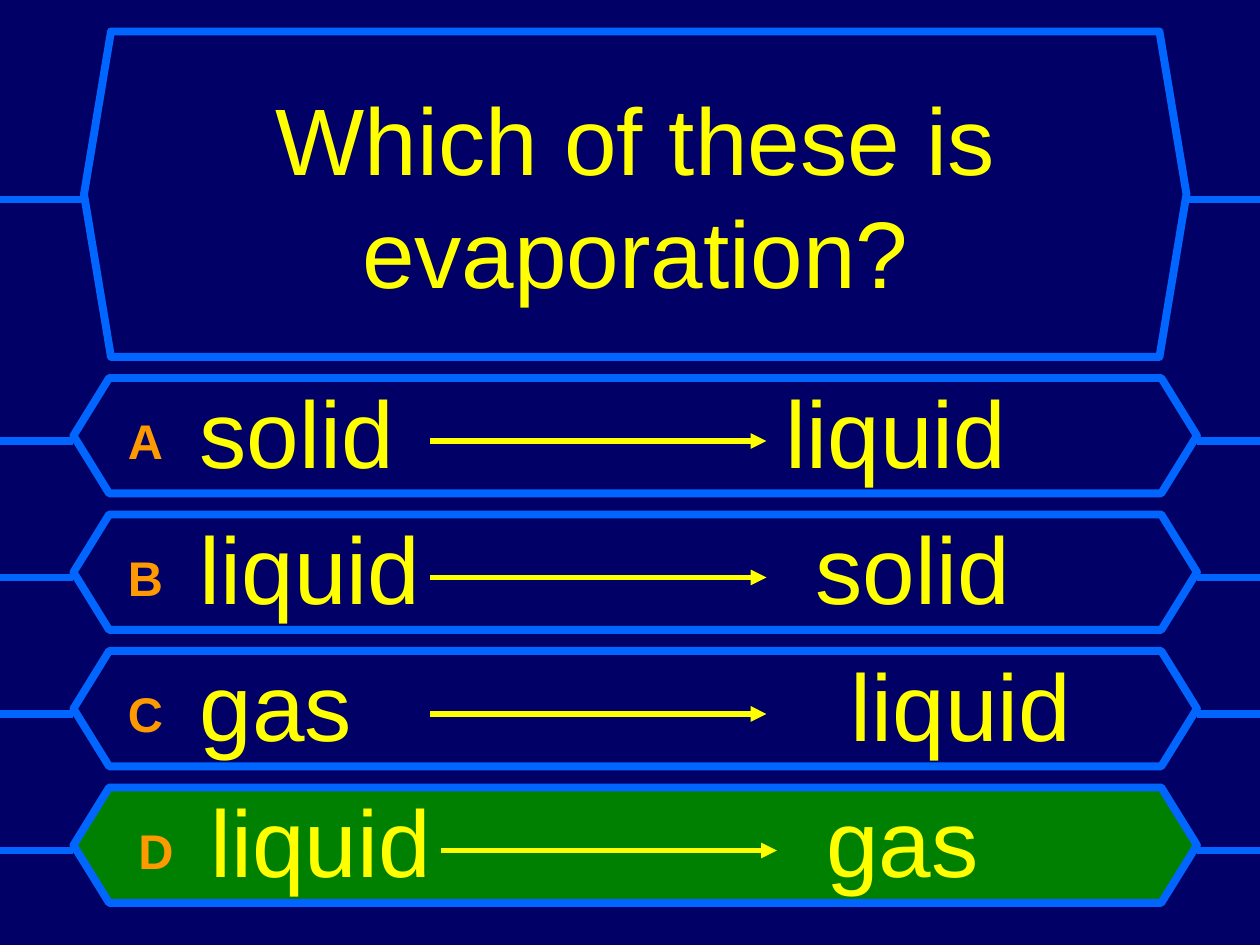
from lxml.etree import SubElement
from pptx import Presentation
from pptx.dml.color import RGBColor
from pptx.enum.shapes import MSO_CONNECTOR as Connector, MSO_SHAPE as Shape
from pptx.enum.text import MSO_ANCHOR as Anchor, MSO_AUTO_SIZE as AutoSize, PP_ALIGN as Align
from pptx.oxml.ns import qn
from pptx.util import Pt

NAVY, BLUE, GREEN = "000066", "0066FF", "008000"
YELLOW, ORANGE = "FFFF00", "FF9900"
SLIDE_WIDTH, SLIDE_HEIGHT = 720, 540
ROW_TOP, ROW_PITCH, ROW_HEIGHT = 216, 78, 66
ROW_LEFT, ROW_WIDTH = 42, 642
WORD_TAB = 41

ANSWERS = [
    ("A", "solid", "liquid", 66, 523.4, 376, NAVY),
    ("B", "liquid", "solid", 66, 523.4, 393, NAVY),
    ("C", "gas", "liquid", 66, 562.3, 413, None),
    ("D", "liquid", "gas", 72, 499.7, 393, GREEN),
]


def color(value):
    return RGBColor.from_string(value)


def add_text(paragraph, text, size=54, fill=YELLOW, bold=False, baseline=None):
    run = paragraph.add_run()
    run.text = text
    run.font.name = "Arial"
    run.font.size = Pt(size)
    run.font.bold = bold
    run.font.color.rgb = color(fill)
    if baseline:
        run.font._element.set("baseline", str(baseline * 1000))


def add_hexagon(shapes, left, top, width, height, point, fill):
    shape = shapes.add_shape(Shape.HEXAGON, Pt(left), Pt(top), Pt(width), Pt(height))
    shape.shadow.inherit = False
    shape.adjustments[0] = point
    shape.line.color.rgb = color(BLUE)
    shape.line.width = Pt(4.5)
    if fill:
        shape.fill.solid()
        shape.fill.fore_color.rgb = color(fill)
    else:
        shape.fill.background()


def add_line(shapes, start, end, y, stroke=BLUE, width=4.5, arrow=False):
    line = shapes.add_connector(Connector.STRAIGHT, Pt(start), Pt(y), Pt(end), Pt(y))
    line.line.color.rgb = color(stroke)
    line.line.width = Pt(width)
    if arrow:
        SubElement(line.line._get_or_add_ln(), qn("a:tailEnd"), type="triangle")
    SubElement(line._element.spPr, qn("a:effectLst"))


def add_side_lines(shapes, left, right, y):
    add_line(shapes, left, 0, y)
    add_line(shapes, SLIDE_WIDTH, right, y)


def format_answer(paragraph, tabs):
    properties = paragraph._p.get_or_add_pPr()
    spacing = SubElement(properties, qn("a:spcBef"))
    SubElement(spacing, qn("a:spcPct"), val="20000")
    tab_list = SubElement(properties, qn("a:tabLst"))
    for position in tabs:
        SubElement(tab_list, qn("a:tab"), pos=str(Pt(position)), algn="l")


def add_answer(shapes, letter, before, after, left, top, width, second_tab):
    group = shapes.add_group_shape()
    box = group.shapes.add_textbox(Pt(left), Pt(top - 6), Pt(width), Pt(72))
    frame = box.text_frame
    frame.word_wrap = True
    frame.auto_size = AutoSize.SHAPE_TO_FIT_TEXT
    paragraph = frame.paragraphs[0]
    format_answer(paragraph, (WORD_TAB, second_tab))
    add_text(paragraph, letter, size=48, fill=ORANGE, bold=True, baseline=10)
    add_text(paragraph, f"\t{before}\t{after}")
    add_line(group.shapes, left + 180, left + 372, top + 36, YELLOW, 3, arrow=True)


def add_question(slide, text):
    add_hexagon(slide.shapes, 48, 18, 630, 186, 0.083, NAVY)
    add_side_lines(slide.shapes, 48, 678, 114)
    title = slide.shapes.title
    title.left, title.top, title.width, title.height = Pt(60), Pt(30), Pt(606), Pt(162)
    frame = title.text_frame
    frame.word_wrap = True
    frame.auto_size = AutoSize.NONE
    frame.vertical_anchor = Anchor.MIDDLE
    paragraph = frame.paragraphs[0]
    paragraph.alignment = Align.CENTER
    add_text(paragraph, text)
    title._element.getparent().append(title._element)


def main():
    presentation = Presentation()
    presentation.slide_width = Pt(SLIDE_WIDTH)
    presentation.slide_height = Pt(SLIDE_HEIGHT)
    slide = presentation.slides.add_slide(presentation.slide_layouts[5])
    slide.background.fill.solid()
    slide.background.fill.fore_color.rgb = color(NAVY)
    add_question(slide, "Which of these is evaporation?")
    for row, (letter, before, after, left, width, second_tab, fill) in enumerate(ANSWERS):
        top = ROW_TOP + row * ROW_PITCH
        add_hexagon(slide.shapes, ROW_LEFT, top, ROW_WIDTH, ROW_HEIGHT, 0.309, fill)
        add_side_lines(slide.shapes, ROW_LEFT, ROW_LEFT + ROW_WIDTH, top + 36)
        add_answer(slide.shapes, letter, before, after, left, top, width, second_tab)
    presentation.save("out.pptx")


if __name__ == "__main__":
    main()
